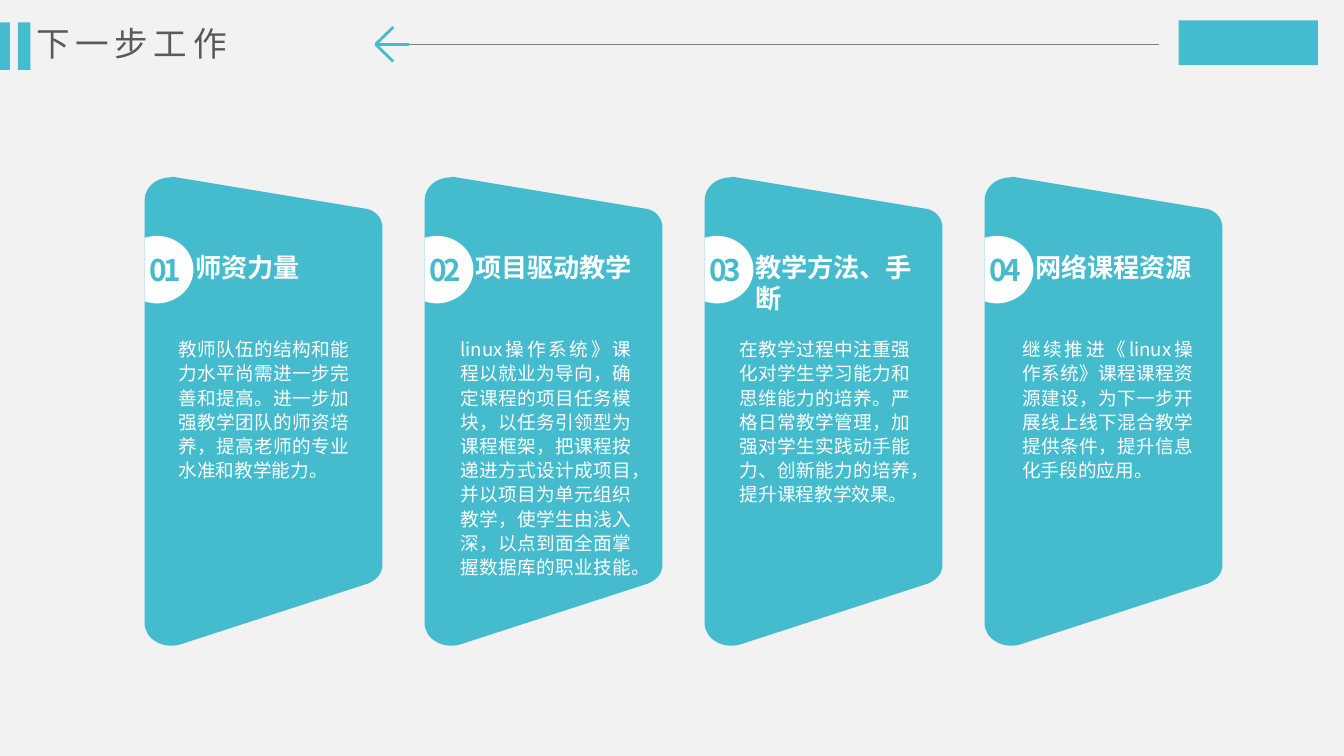
from lxml.etree import SubElement
from pptx import Presentation
from pptx.dml.color import RGBColor
from pptx.enum.shapes import MSO_CONNECTOR as Connector, MSO_SHAPE as Preset
from pptx.enum.text import MSO_AUTO_SIZE as AutoSize, PP_ALIGN as Align
from pptx.oxml.ns import qn
from pptx.util import Inches, Pt

UNIT = Inches(0.1)  # side of one grid square: 133.3 columns by 75 rows
FONT = "Noto Sans CJK SC"
TEAL, WHITE, GREY, DARK, PALE = "45BBCE", "FFFFFF", "808080", "595959", "F2F2F2"
CARD_LEFT, CARD_TOP, CARD_STEP = 14.34, 17.6, 27.77

# Outlines in grid squares from the card's top left corner.
# Two numbers make a straight edge, six numbers a curve.
CARD_OUTLINE = [
    (2.55, 0), (2.75, -0.1, 2.95, -0.05, 3.15, 0), (21.85, 3.1),
    (22.85, 3.2, 23.6, 4, 23.6, 5), (23.6, 11.5), (23.6, 31.8), (23.6, 38.4),
    (23.6, 39.4, 22.9, 40, 22.15, 40.3), (3.65, 46.3),
    (1.85, 46.9, 0, 45.8, 0, 44.2), (0, 37.7), (0, 8.8), (0, 2.3),
    (0, 1, 1.15, 0, 2.55, 0),
]
BADGE_OUTLINE = [
    (1.2, 12.5), (0.8, 12.5, 0.4, 12.4, 0, 12.3), (0, 6),
    (0.4, 5.9, 0.8, 5.8, 1.2, 5.8), (3.2, 5.8, 4.85, 7.3, 4.85, 9.15),
    (4.85, 11, 3.2, 12.5, 1.2, 12.5),
]

# heading, heading rows, body column within the card, body rows, body
CARDS = [
    ("师资力量", 4.2, 2.4, 15.2,
     "教师队伍的结构和能力水平尚需进一步完善和提高。"
     "进一步加强教学团队的师资培养，提高老师的专业水准和教学能力。"),
    ("项目驱动教学", 4.2, 2.58, 24.7,
     "linux操作系统》课程以就业为导向，确定课程的项目任务模块，以任务引领型为课程框架，"
     "把课程按递进方式设计成项目，并以项目为单元组织教学，"
     "使学生由浅入深，以点到面全面掌握数据库的职业技能。"),
    ("教学方法、手断", 7.3, 2.52, 17.5,
     "在教学过程中注重强化对学生学习能力和思维能力的培养。"
     "严格日常教学管理，加强对学生实践动手能力、创新能力的培养，提升课程教学效果。"),
    ("网络课程资源", 4.2, 2.75, 15.2,
     "继续推进《linux操作系统》课程课程资源建设，"
     "为下一步开展线上线下混合教学提供条件，提升信息化手段的应用。"),
]


def grid(*squares):
    return [round(count * UNIT) for count in squares]


def color(code):
    return RGBColor.from_string(code)


def paint(shape, fill):
    shape.shadow.inherit = False
    shape.fill.solid()
    shape.fill.fore_color.rgb = color(fill)
    shape.line.fill.background()


def add_block(page, left, top, width, height):
    paint(page.shapes.add_shape(Preset.RECTANGLE, *grid(left, top, width, height)), TEAL)


def add_line(page, start, end, ink, weight):
    line = page.shapes.add_connector(Connector.STRAIGHT, *grid(*start, *end))
    line.line.color.rgb = color(ink)
    line.line.width = Pt(weight)
    SubElement(line._element.spPr, qn("a:effectLst"))


def bend(segment, controls, shape):
    """Turn a straight segment into a curve through two control points and an end."""
    segment.tag = qn("a:cubicBezTo")
    for point in list(segment):
        segment.remove(point)
    for x, y in zip(controls[::2], controls[1::2]):
        SubElement(segment, qn("a:pt"), x=str(x - shape.left), y=str(y - shape.top))


def add_outline(page, left, top, outline, fill):
    edges = [
        grid(*(number + (top if place % 2 else left) for place, number in enumerate(edge)))
        for edge in outline
    ]
    builder = page.shapes.build_freeform(*edges[0])
    builder.add_line_segments([edge[-2:] for edge in edges[1:]], close=True)
    shape = builder.convert_to_shape()
    segments = list(shape._element.iter(qn("a:lnTo")))
    for segment, edge in zip(segments, edges[1:]):
        if len(edge) == 6:
            bend(segment, edge, shape)
    paint(shape, fill)


def add_text(page, area, text, size, ink, bold=False, align=Align.LEFT,
             spacing=0, leading=None, wrap=True, margins=True):
    """Spacing is between letters and leading between lines, both in points."""
    box = page.shapes.add_textbox(*grid(*area))
    frame = box.text_frame
    frame.word_wrap = wrap
    frame.auto_size = AutoSize.SHAPE_TO_FIT_TEXT
    if not margins:
        frame.margin_left = frame.margin_right = 0
        frame.margin_top = frame.margin_bottom = 0
    para = frame.paragraphs[0]
    para.alignment = align
    if leading:
        para.line_spacing = Pt(leading)
    span = para.add_run()
    span.text = text
    span.font.size = Pt(size)
    span.font.bold = bold
    span.font.color.rgb = color(ink)
    span.font.name = FONT
    properties = span.font._element
    SubElement(properties, qn("a:ea"), typeface=FONT)
    if spacing:
        properties.set("spc", str(spacing * 100))


def add_header(page):
    add_block(page, -0.15, 2.23, 1.13, 4.7)
    add_block(page, 1.77, 2.23, 1.25, 4.7)
    add_block(page, 116.9, 2.03, 13.8, 4.4)
    add_line(page, (40.6, 4.4), (115, 4.4), GREY, 0.5)
    add_text(page, (2.63, 1.8, 35.6, 5), "下一步工作", 24, DARK, spacing=4)
    for end in ((39, 2.7), (39, 6.1), (40.6, 4.4)):
        add_line(page, (37.25, 4.4), end, TEAL, 2)


def add_card(page, index, heading, heading_rows, body_column, body_rows, body):
    left = CARD_LEFT + index * CARD_STEP
    add_outline(page, left, CARD_TOP, CARD_OUTLINE, TEAL)
    add_outline(page, left, CARD_TOP, BADGE_OUTLINE, WHITE)
    add_text(page, (left + 0.46, 25, 3.2, 3.6), f"{index + 1:02}", 21.3, TEAL, bold=True,
             align=Align.CENTER, spacing=-2, wrap=False, margins=False)
    add_text(page, (left + body_column, 32.86, 18.9, body_rows), body, 13.3, WHITE,
             align=Align.JUSTIFY, leading=17.3)
    add_text(page, (left + 4.06, 24.45, 19.5, heading_rows), heading, 18.67, WHITE, bold=True)


def main():
    deck = Presentation()
    deck.slide_width, deck.slide_height = Inches(13.33), Inches(7.5)
    page = deck.slides.add_slide(deck.slide_layouts[6])
    page.background.fill.solid()
    page.background.fill.fore_color.rgb = color(PALE)
    add_header(page)
    for index, card in enumerate(CARDS):
        add_card(page, index, *card)
    deck.save("out.pptx")


if __name__ == "__main__":
    main()
